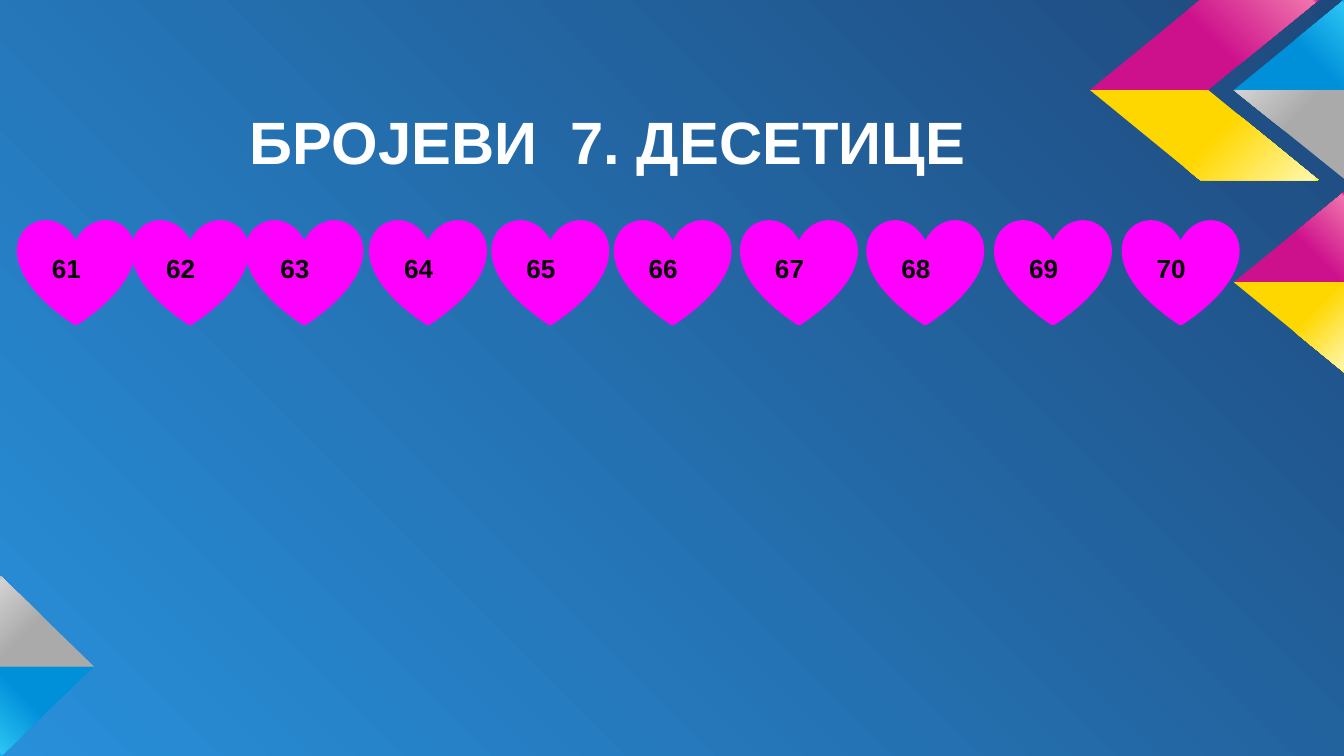
from dataclasses import dataclass

from lxml import etree
from pptx import Presentation
from pptx import util as u
from pptx.dml import color
from pptx.enum import shapes, text
from pptx.oxml import ns

FONT = "Arial"
MAGENTA = "FF00FF"
SLIDE_WIDTH = 10
SLIDE_HEIGHT = SLIDE_WIDTH * 9 / 16
BLUE_STOPS = ((0, "0090DA"), (54, "0090DA"), (98, "2BC4F3"), (100, "00AEEE"))
GREY_STOPS = ((0, "AAAAAA"), (54, "AAAAAA"), (98, "D2D2D2"), (100, "B9B9B9"))
PINK_STOPS = ((0, "CD118C"), (54, "CD118C"), (98, "F074AC"), (100, "EB008B"))
YELLOW_STOPS = ((0, "FFD700"), (54, "FFD700"), (98, "FFF7A9"), (100, "FFF100"))


@dataclass
class Ribbon:
    points: tuple
    stops: tuple
    angle: int


@dataclass
class Heart:
    number: int
    left: float


RIBBONS = [
    Ribbon(((0.7, 4.96), (0, 4.96), (0, SLIDE_HEIGHT), (0.01, SLIDE_HEIGHT)), BLUE_STOPS, 135),
    Ribbon(((0.7, 4.96), (0.01, 4.29), (0, 4.29), (0, 4.96)), GREY_STOPS, 225),
    Ribbon(((10, 0), (9.18, 0.67), (10, 0.67)), BLUE_STOPS, 315),
    Ribbon(((9.18, 0.67), (10, 1.33), (10, 0.67)), GREY_STOPS, 225),
    Ribbon(((8.99, 0.67), (9.81, 0), (8.93, 0), (8.11, 0.67)), PINK_STOPS, 315),
    Ribbon(((10, 1.43), (9.18, 2.1), (10, 2.1)), PINK_STOPS, 315),
    Ribbon(((9.18, 2.1), (10, 2.77), (10, 2.1)), YELLOW_STOPS, 45),
    Ribbon(((8.99, 0.67), (9.81, 1.34), (8.93, 1.34), (8.11, 0.67)), YELLOW_STOPS, 45),
]
HEART_LEFTS = (0.15, 1, 1.85, 2.77, 3.68, 4.59, 5.53, 6.47, 7.42, 8.37)
HEARTS = [Heart(number, left) for number, left in enumerate(HEART_LEFTS, 61)]


def rgb(value: str) -> color.RGBColor:
    return color.RGBColor.from_string(value)


def apply(target, values: dict) -> None:
    for name, value in values.items():
        setattr(target, name, value)


def add_node(parent, tag: str, **values):
    return etree.SubElement(parent, ns.qn(tag), values)


def set_gradient(owner, fill, stops: tuple):
    fill.gradient()
    gradient = owner._element.find(".//" + ns.qn("a:gradFill"))
    for child in list(gradient):
        gradient.remove(child)
    stop_list = add_node(gradient, "a:gsLst")
    for position, value in stops:
        stop = add_node(stop_list, "a:gs", pos=str(position * 1000))
        add_node(stop, "a:srgbClr", val=value)
    return gradient


def write_text(frame, words: str, size: int, value: str) -> None:
    para = frame.paragraphs[0]
    para.alignment = text.PP_ALIGN.LEFT
    span = para.add_run()
    span.text = words
    apply(span.font, {"name": FONT, "size": u.Pt(size), "bold": True})
    span.font.color.rgb = rgb(value)


def paint_background(page) -> None:
    stops = ((0, "2890DA"), (100, "1F497D"))
    gradient = set_gradient(page, page.background.fill, stops)
    circle = add_node(gradient, "a:path", path="circle")
    add_node(circle, "a:fillToRect", l="0", t="100000", r="100000", b="0")


def draw_ribbon(page, ribbon: Ribbon) -> None:
    points = [(u.Inches(x), u.Inches(y)) for x, y in ribbon.points]
    builder = page.shapes.build_freeform(*points[0])
    builder.add_line_segments(points[1:], close=True)
    shape = builder.convert_to_shape()
    shape.shadow.inherit = False
    shape.line.fill.background()
    gradient = set_gradient(shape, shape.fill, ribbon.stops)
    add_node(gradient, "a:lin", ang=str(ribbon.angle * 60000), scaled="0")


def draw_heart(page, heart: Heart) -> None:
    shape = page.shapes.add_shape(
        shapes.MSO_SHAPE.HEART,
        u.Inches(heart.left), u.Inches(1.65), u.Inches(0.83), u.Inches(0.75),
    )
    shape.shadow.inherit = False
    shape.fill.solid()
    shape.fill.fore_color.rgb = rgb(MAGENTA)
    shape.line.color.rgb = rgb(MAGENTA)
    shape.line.width = u.Pt(3)
    margins = ("margin_left", "margin_top", "margin_right", "margin_bottom")
    apply(shape.text_frame, dict.fromkeys(margins, u.Inches(0.1)))
    shape.text_frame.vertical_anchor = text.MSO_ANCHOR.MIDDLE
    write_text(shape.text_frame, str(heart.number), 14, "000000")


def write_title(page) -> None:
    box = page.shapes.title
    apply(box, {
        "left": u.Inches(0.15), "top": u.Inches(0.45),
        "width": u.Inches(9.29), "height": u.Inches(3.97),
    })
    apply(box.text_frame, {
        "margin_left": u.Inches(1.71), "margin_top": u.Inches(0.33),
        "margin_right": u.Inches(0.1), "margin_bottom": u.Inches(0.1),
        "vertical_anchor": text.MSO_ANCHOR.TOP,
        "auto_size": text.MSO_AUTO_SIZE.NONE, "word_wrap": True,
    })
    write_text(box.text_frame, "БРОЈЕВИ  7. ДЕСЕТИЦЕ", 32, "FFFFFF")


def main() -> None:
    deck = Presentation()
    apply(deck, {
        "slide_width": u.Inches(SLIDE_WIDTH),
        "slide_height": u.Inches(SLIDE_HEIGHT),
    })
    page = deck.slides.add_slide(deck.slide_layouts.get_by_name("Title Only"))
    paint_background(page)
    write_title(page)
    for ribbon in RIBBONS:
        draw_ribbon(page, ribbon)
    for heart in HEARTS:
        draw_heart(page, heart)
    deck.save("out.pptx")


if __name__ == "__main__":
    main()
